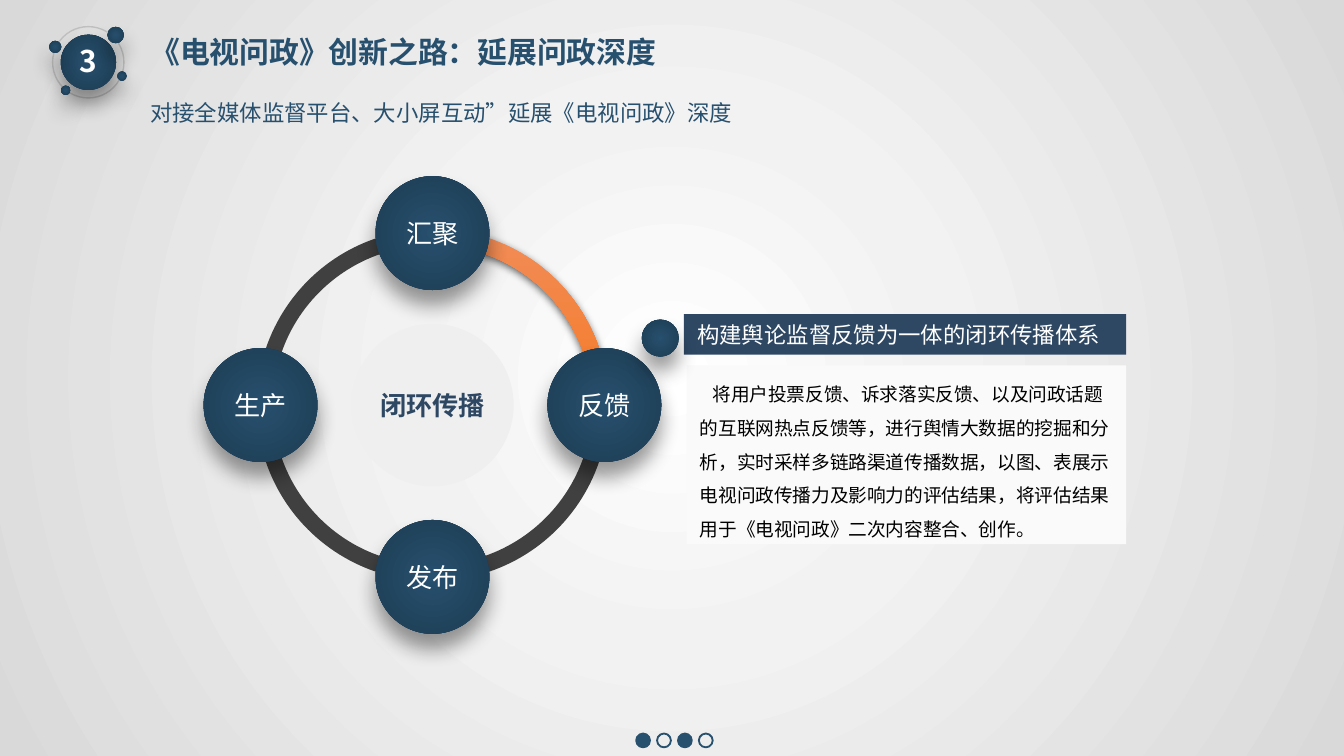
import math
from lxml import etree
from pptx import Presentation
from pptx.dml.color import RGBColor
from pptx.enum.shapes import MSO_SHAPE
from pptx.enum.text import MSO_ANCHOR, PP_ALIGN
from pptx.oxml.ns import qn
from pptx.util import Pt

OVAL, RECT, ARC = MSO_SHAPE.OVAL, MSO_SHAPE.RECTANGLE, MSO_SHAPE.BLOCK_ARC
LEFT, CENTER = PP_ALIGN.LEFT, PP_ALIGN.CENTER
TOP, MIDDLE = MSO_ANCHOR.TOP, MSO_ANCHOR.MIDDLE

FONT = "Noto Sans CJK SC"
BLUE, NAVY, WHITE, BLACK, GREY = "27506E", "2E4864", "FFFFFF", "000000", "404040"
BLUE_STOPS = [(0, BLUE), (100, "1D3C52")]
ORANGE_STOPS = [(0, "F18C57"), (50, "F67B28"), (100, "E56C19")]
PAGE_STOPS = [(0, WHITE), (35, "F2F2F2"), (100, "D9D9D9")]


def color(code):
    return RGBColor.from_string(code)


def add_color(parent, code):
    return etree.SubElement(parent, qn("a:srgbClr"), val=code)


def replace_with_gradient(parent, stops, angle=None):
    """Swap a solid fill for a linear gradient, or a radial one without angle."""
    gradient = etree.Element(qn("a:gradFill"), rotWithShape="1")
    stop_list = etree.SubElement(gradient, qn("a:gsLst"))
    for position, code in stops:
        add_color(etree.SubElement(stop_list, qn("a:gs"), pos=str(position * 1000)), code)
    if angle is None:
        radial = etree.SubElement(gradient, qn("a:path"), {"path": "circle"})
        etree.SubElement(radial, qn("a:fillToRect"),
                         {side: "50000" for side in "ltrb"})
    else:
        etree.SubElement(gradient, qn("a:lin"), ang=str(angle * 60000), scaled="0")
    parent.replace(parent.find(qn("a:solidFill")), gradient)


class SlideBuilder:
    def __init__(self, slide):
        self.slide = slide

    def background(self, stops):
        self.slide.background.fill.solid()
        properties = self.slide.element.find(".//" + qn("p:bgPr"))
        replace_with_gradient(properties, stops)

    def shape(self, kind, left, top, width, height, fill=None, line=None, weight=1):
        shape = self.slide.shapes.add_shape(kind, Pt(left), Pt(top), Pt(width), Pt(height))
        shape.shadow.inherit = False
        if fill:
            shape.fill.solid()
            shape.fill.fore_color.rgb = color(fill)
        else:
            shape.fill.background()
        if line:
            shape.line.color.rgb = color(line)
            shape.line.width = Pt(weight)
        else:
            shape.line.fill.background()
        return shape

    def circle(self, x, y, size, **style):
        return self.shape(OVAL, x - size / 2, y - size / 2, size, size, **style)

    def shadow(self, shape, blur, distance, opacity):
        effects = shape.element.spPr.find(qn("a:effectLst"))
        outer = etree.SubElement(effects, qn("a:outerShdw"), blurRad=str(Pt(blur)),
                                 dist=str(Pt(distance)), dir="5400000",
                                 algn="t", rotWithShape="0")
        etree.SubElement(add_color(outer, BLACK), qn("a:alpha"), val=str(opacity * 1000))

    def ball(self, x, y, size):
        ball = self.circle(x, y, size, fill=BLUE)
        replace_with_gradient(ball.element.spPr, BLUE_STOPS)
        self.shadow(ball, 11, 8, 40)
        return ball

    def arc(self, x, y, size, start, end):
        arc = self.shape(ARC, x - size / 2, y - size / 2, size, size, fill=GREY)
        # Angles count in units of 5/3 degree
        arc.adjustments[0], arc.adjustments[1] = start * 0.6, end * 0.6
        arc.adjustments[2] = 0.046
        return arc

    def label(self, shape, text, size, code, bold=False, align=LEFT, anchor=TOP,
              spacing=1, wrap=True, margins=(7.2, 3.6)):
        frame = shape.text_frame
        frame.text = text
        frame.word_wrap = wrap
        frame.vertical_anchor = anchor
        frame.margin_left = frame.margin_right = Pt(margins[0])
        frame.margin_top = frame.margin_bottom = Pt(margins[1])
        para = frame.paragraphs[0]
        para.alignment = align
        para.line_spacing = spacing
        span = para.runs[0]
        span.font.name = FONT
        span.font.size = Pt(size)
        span.font.bold = bold
        span.font.color.rgb = color(code)
        etree.SubElement(span.font._element, qn("a:ea"), typeface=FONT)
        return para

    def text_box(self, left, top, width, height, text, size, code, **style):
        box = self.slide.shapes.add_textbox(Pt(left), Pt(top), Pt(width), Pt(height))
        self.label(box, text, size, code, wrap=False, **style)

    def title(self, left, top, width, height, text, size, code):
        title = self.slide.shapes.title
        title.left, title.top, title.width, title.height = map(Pt, (left, top, width, height))
        self.label(title, text, size, code, bold=True, wrap=False)


def main():
    deck = Presentation()
    deck.slide_width, deck.slide_height = Pt(720), Pt(405)
    page = SlideBuilder(deck.slides.add_slide(deck.slide_layouts[5]))
    page.background(PAGE_STOPS)

    # Numbered badge with its satellites
    page.circle(47.3, 33.4, 38.2, line="BFBFBF", weight=0.75)
    for x, y, size in [(47.4, 33.4, 29.6), (62, 18.8, 8.8), (29.6, 25.1, 6.5),
                       (35.2, 48.4, 5), (65.4, 40.8, 5)]:
        page.ball(x, y, size)
    page.text_box(35.3, 19.4, 24.5, 26.6, "3", 16, WHITE, bold=True)

    # Headings
    page.title(73.4, 14.4, 286.6, 26.6, "《电视问政》创新之路：延展问政深度", 16, BLUE)
    page.text_box(73.4, 42.5, 329.8, 26.6,
                  "对接全媒体监督平台、大小屏互动”延展《电视问政》深度", 12, BLUE, spacing=1.5)

    # Page dots, every other one filled
    for index in range(4):
        page.circle(344.5 + 11.2 * index, 396.7, 7.4,
                    fill=None if index % 2 else BLUE, line=BLUE)

    # Ring of four quarter arcs, the top right one highlighted
    ring_x, ring_y, ring_size, orbit = 231.7, 217, 188.6, 92.1
    for start in (180, 90, 0, 270):
        arc = page.arc(ring_x, ring_y, ring_size, start, (start + 90) % 360)
    replace_with_gradient(arc.element.spPr, ORANGE_STOPS, angle=90)
    page.shadow(arc, 4.5, 1.5, 63)

    # Hub and the four steps around it
    centered = {"align": CENTER, "anchor": MIDDLE, "margins": (0, 0)}
    hub = page.circle(ring_x, ring_y, 87, fill="EFEFEF")
    page.label(hub, "闭环传播", 14, NAVY, bold=True, **centered)
    for index, step in enumerate(["汇聚", "反馈", "发布", "生产"]):
        angle = math.radians(90 * index - 90)
        node = page.ball(ring_x + orbit * math.cos(angle),
                         ring_y + orbit * math.sin(angle), 61)
        page.label(node, step, 14, WHITE, **centered)

    # Explanation panel
    panel = page.shape(RECT, 367.9, 195.8, 235.4, 95.8, fill="FAFAFA")
    para = page.label(
        panel,
        "将用户投票反馈、诉求落实反馈、以及问政话题的互联网热点反馈等，进行舆情大数据的挖掘和分析，"
        "实时采样多链路渠道传播数据，以图、表展示电视问政传播力及影响力的评估结果，"
        "将评估结果用于《电视问政》二次内容整合、创作。",
        10, BLACK, spacing=1.5)
    para._p.get_or_add_pPr().set("indent", str(Pt(6.7)))
    header = page.shape(RECT, 366.4, 168.3, 236.9, 21.7, fill=NAVY)
    page.label(header, "构建舆论监督反馈为一体的闭环传播体系", 12, WHITE)
    page.ball(353.7, 181.1, 19.8)

    deck.save("out.pptx")


if __name__ == "__main__":
    main()
